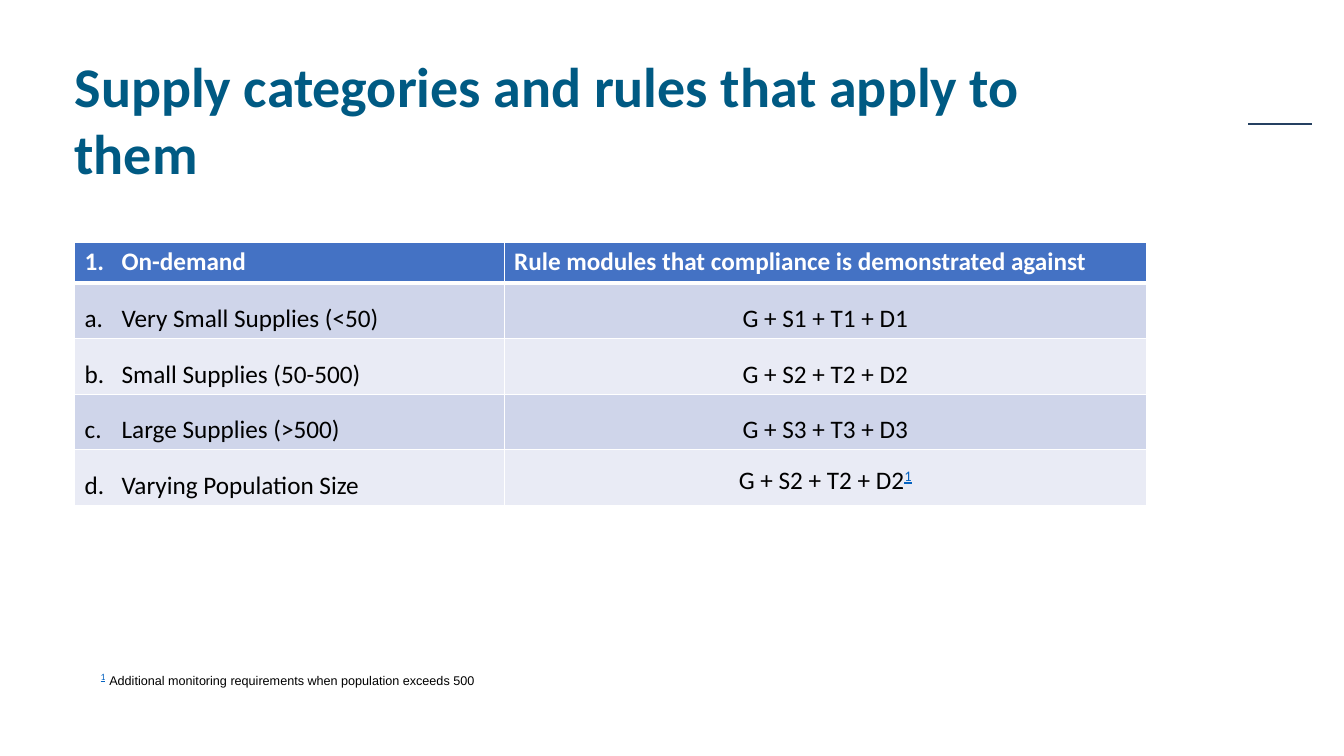
from dataclasses import dataclass

from lxml import etree
from pptx import Presentation
from pptx.dml.color import RGBColor
from pptx.enum.shapes import MSO_CONNECTOR
from pptx.enum.text import MSO_ANCHOR, PP_ALIGN
from pptx.oxml.ns import qn
from pptx.util import Emu, Inches, Pt

STRAIGHT = MSO_CONNECTOR.STRAIGHT
MIDDLE = MSO_ANCHOR.MIDDLE
LEFT, CENTER = PP_ALIGN.LEFT, PP_ALIGN.CENTER
BLANK_LAYOUT = 6
SLIDE_WIDTH, SLIDE_HEIGHT = Inches(13.33), Inches(7.5)


@dataclass(frozen=True)
class Theme:
    title: str = "005A83"
    accent: str = "254061"
    header: str = "4472C4"
    bands: tuple[str, str] = ("CFD5EA", "E9EBF5")
    white: str = "FFFFFF"
    text: str = "000000"
    link: str = "0563C1"
    font: str = "Calibri"
    note_font: str = "Arial"
    title_size: float = 40
    table_size: float = 18
    mark_size: float = 12
    note_size: float = 9


@dataclass(frozen=True)
class Supply:
    category: str
    rules: str
    footnote: str = ""


THEME = Theme()
SUPPLIES = [
    Supply("Very Small Supplies (<50)", "G + S1 + T1 + D1"),
    Supply("Small Supplies (50-500)", "G + S2 + T2 + D2"),
    Supply("Large Supplies (>500)", "G + S3 + T3 + D3"),
    Supply("Varying Population Size", "G + S2 + T2 + D2", footnote="1"),
]


def across(percent: float) -> Emu:
    return Emu(round(SLIDE_WIDTH * percent / 100))


def down(percent: float) -> Emu:
    return Emu(round(SLIDE_HEIGHT * percent / 100))


def add_text(paragraph, text: str, *, size: float, color: str = THEME.text,
             font: str = THEME.font, bold: bool = False, superscript: bool = False) -> None:
    """Append a run; a superscript run is an underlined reference mark."""
    run = paragraph.add_run()
    run.text = text
    run.font.size = Pt(size)
    run.font.name = font
    run.font.bold = bold
    run.font.color.rgb = RGBColor.from_string(color)
    if superscript:
        run.font.underline = True
        run.font._element.set("baseline", "30000")


def number_paragraph(paragraph, scheme: str, start: int) -> None:
    properties = paragraph._p.get_or_add_pPr()
    indent = across(2.75)
    properties.set("marL", str(indent))
    properties.set("indent", str(-indent))
    etree.SubElement(properties, qn("a:buAutoNum"), type=scheme, startAt=str(start))


def style_cell(cell, fill: str, bottom_width: float = 1, top_width: float = 1) -> None:
    properties = cell._tc.get_or_add_tcPr()
    widths = {"a:lnL": 1, "a:lnR": 1, "a:lnT": top_width, "a:lnB": bottom_width}
    for side, width in widths.items():
        border = etree.SubElement(properties, qn(side), w=str(Pt(width)))
        solid = etree.SubElement(border, qn("a:solidFill"))
        etree.SubElement(solid, qn("a:srgbClr"), val=THEME.white)
    cell.fill.solid()
    cell.fill.fore_color.rgb = RGBColor.from_string(fill)


def add_title(slide) -> None:
    frame = slide.shapes.add_textbox(across(5.55), down(6.8), across(76.22), down(18)).text_frame
    frame.word_wrap = True
    frame.margin_left = frame.margin_right = frame.margin_top = frame.margin_bottom = 0
    add_text(frame.paragraphs[0], "Supply categories and rules that apply to them",
             size=THEME.title_size, color=THEME.title, bold=True)


def add_accent_line(slide) -> None:
    line = slide.shapes.add_connector(STRAIGHT, across(97.6), down(16.4), across(92.87), down(16.4))
    line.line.color.rgb = RGBColor.from_string(THEME.accent)
    line.line.width = Pt(1)
    etree.SubElement(line._element.spPr, qn("a:effectLst"))


def add_supply_table(slide) -> None:
    widths = (across(31.96), across(47.79))
    height = down(32.27)
    holder = slide.shapes.add_table(len(SUPPLIES) + 1, len(widths), across(5.55), down(32),
                                    sum(widths), height)
    table = holder.table
    for column, width in zip(table.columns, widths):
        column.width = width
    for row in table.rows:
        row.height = down(5.47)
    holder.height = height

    headings = ("On-demand", "Rule modules that compliance is demonstrated against")
    for column, heading in enumerate(headings):
        cell = table.cell(0, column)
        style_cell(cell, THEME.header, bottom_width=3)
        paragraph = cell.text_frame.paragraphs[0]
        if column == 0:
            number_paragraph(paragraph, "arabicPeriod", 1)
        add_text(paragraph, heading, size=THEME.table_size, color=THEME.white, bold=True)

    for number, supply in enumerate(SUPPLIES, start=1):
        band = THEME.bands[(number - 1) % len(THEME.bands)]
        for column, (text, align) in enumerate(((supply.category, LEFT), (supply.rules, CENTER))):
            cell = table.cell(number, column)
            style_cell(cell, band, top_width=3 if number == 1 else 1)
            paragraph = cell.text_frame.paragraphs[0]
            paragraph.alignment = align
            paragraph.line_spacing = 1.5
            if column == 0:
                number_paragraph(paragraph, "alphaLcPeriod", number)
            add_text(paragraph, text, size=THEME.table_size)
        if supply.footnote:
            cell.margin_left = cell.margin_right = across(0.5)
            cell.margin_top = cell.margin_bottom = 0
            add_text(paragraph, supply.footnote, size=THEME.table_size, color=THEME.link,
                     superscript=True)


def add_footnote(slide) -> None:
    frame = slide.shapes.add_textbox(across(6.75), down(87.73), across(29.93), down(4)).text_frame
    frame.word_wrap = False
    frame.vertical_anchor = MIDDLE
    paragraph = frame.paragraphs[0]
    add_text(paragraph, "1", size=THEME.mark_size, color=THEME.link, superscript=True)
    add_text(paragraph, " ", size=THEME.mark_size)
    add_text(paragraph, "Additional monitoring requirements when population exceeds 500",
             size=THEME.note_size, font=THEME.note_font)


def main() -> None:
    deck = Presentation()
    deck.slide_width, deck.slide_height = SLIDE_WIDTH, SLIDE_HEIGHT
    slide = deck.slides.add_slide(deck.slide_layouts[BLANK_LAYOUT])
    add_accent_line(slide)
    add_title(slide)
    add_footnote(slide)
    add_supply_table(slide)
    deck.save("out.pptx")


if __name__ == "__main__":
    main()
